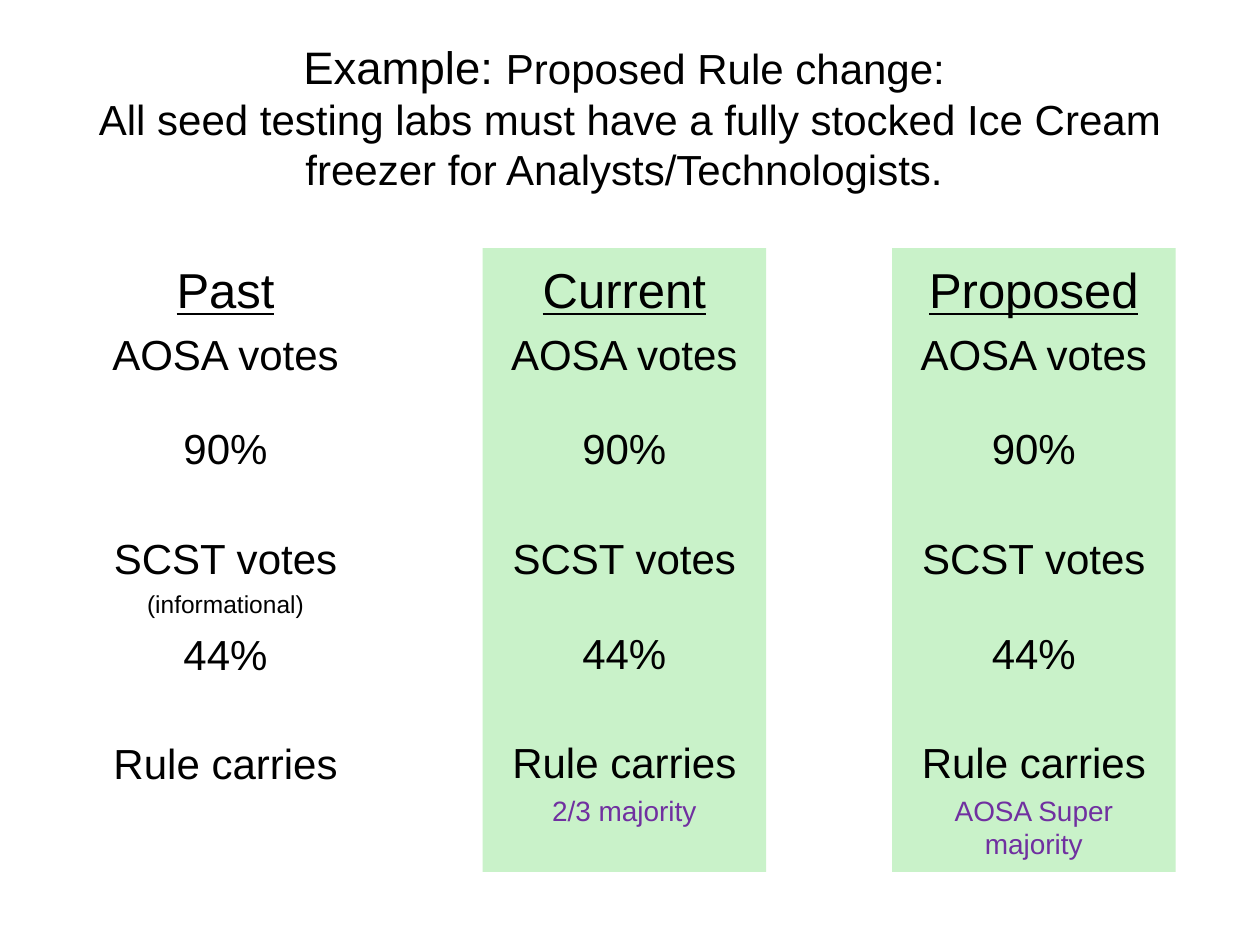
from pptx import Presentation
from pptx.dml.color import RGBColor
from pptx.enum.shapes import MSO_SHAPE
from pptx.enum.text import MSO_ANCHOR, PP_ALIGN
from pptx.util import Inches, Pt

COLORS = {"text": "000000", "panel": "C9F2C9", "accent": "7030A0"}
FONT = "Arial"
SLIDE_WIDTH, SLIDE_HEIGHT = 10, 7.5

TITLE_LINES = [
    [("Example: ", 26), ("Proposed Rule change: ", 24)],
    [("All seed testing labs must have a fully stocked Ice Cream "
      "freezer for Analysts/Technologists. ", 24)],
]
COLUMNS = [
    {"heading": "Past", "note": "(informational)", "majority": None, "width": 2.42, "fill": None},
    {"heading": "Current", "note": None, "majority": "2/3 majority", "width": 2.25, "fill": "panel"},
    {"heading": "Proposed", "note": None, "majority": "AOSA Super majority", "width": 2.25, "fill": "panel"},
]
COLUMN_LEFT, COLUMN_STEP = 0.58, 3.25
COLUMN_TOP, COLUMN_HEIGHT = 1.97, 4.95
TIGHT_GAP, NOTE_GAP, MEDIUM_GAP, WIDE_GAP = 5.6, 3.4, 25.3, 33.8


def add_text(paragraph, text, size=24, color="text", underline=False, before=None):
    paragraph.alignment = PP_ALIGN.CENTER
    if before is not None:
        paragraph.space_before = Pt(before)
    run = paragraph.add_run()
    run.text = text
    run.font.name = FONT
    run.font.size = Pt(size)
    run.font.underline = underline
    run.font.color.rgb = RGBColor.from_string(COLORS[color])


def add_title(slide):
    box = slide.shapes.add_textbox(Inches(0.5), Inches(0.3), Inches(SLIDE_WIDTH - 1), Inches(1.25))
    frame = box.text_frame
    frame.word_wrap = True
    frame.vertical_anchor = MSO_ANCHOR.MIDDLE
    paragraph = frame.paragraphs[0]
    for number, line in enumerate(TITLE_LINES):
        if number:
            paragraph.add_line_break()
        for text, size in line:
            add_text(paragraph, text, size=size)


def column_lines(column):
    lines = [
        (column["heading"], {"size": 28, "underline": True}),
        ("AOSA votes", {"before": TIGHT_GAP}),
        ("90%", {"before": MEDIUM_GAP}),
        ("SCST votes", {"before": WIDE_GAP}),
    ]
    if column["note"]:
        lines.append((column["note"], {"size": 14, "before": NOTE_GAP}))
    lines += [
        ("44%", {"before": TIGHT_GAP if column["note"] else MEDIUM_GAP}),
        ("Rule carries", {"before": WIDE_GAP}),
    ]
    if column["majority"]:
        lines.append((column["majority"], {"size": 16, "color": "accent", "before": NOTE_GAP}))
    return lines


def add_column(slide, index, column):
    bounds = [Inches(length) for length in (
        COLUMN_LEFT + index * COLUMN_STEP, COLUMN_TOP, column["width"], COLUMN_HEIGHT)]
    if column["fill"]:
        shape = slide.shapes.add_shape(MSO_SHAPE.RECTANGLE, *bounds)
        shape.shadow.inherit = False
        shape.fill.solid()
        shape.fill.fore_color.rgb = RGBColor.from_string(COLORS[column["fill"]])
        shape.line.fill.background()
    else:
        shape = slide.shapes.add_textbox(*bounds)
    frame = shape.text_frame
    frame.word_wrap = True
    frame.vertical_anchor = MSO_ANCHOR.TOP
    frame.margin_top = Inches(0.09)
    for number, (text, style) in enumerate(column_lines(column)):
        paragraph = frame.add_paragraph() if number else frame.paragraphs[0]
        add_text(paragraph, text, **style)


def main():
    presentation = Presentation()
    presentation.slide_width = Inches(SLIDE_WIDTH)
    presentation.slide_height = Inches(SLIDE_HEIGHT)
    slide = presentation.slides.add_slide(presentation.slide_layouts[6])
    add_title(slide)
    for index, column in enumerate(COLUMNS):
        add_column(slide, index, column)
    presentation.save("out.pptx")


if __name__ == "__main__":
    main()
